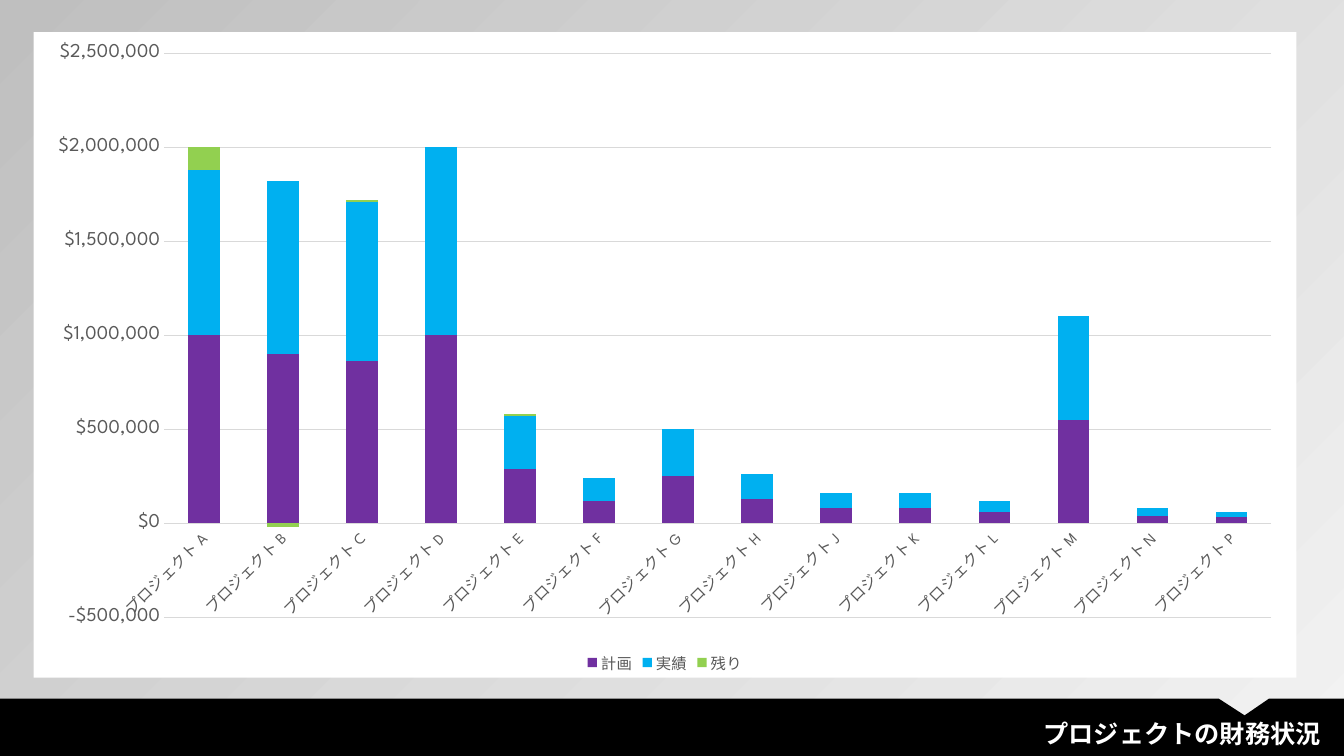
from lxml import etree
from pptx import Presentation
from pptx import util as u
from pptx.chart.data import CategoryChartData
from pptx.dml.color import RGBColor
from pptx.enum import chart as ch, text
from pptx.oxml import parse_xml
from pptx.oxml.ns import nsdecls, qn

FONT = "League Spartan"
BLACK = RGBColor(0x00, 0x00, 0x00)
WHITE = RGBColor(0xFF, 0xFF, 0xFF)
LIGHT = RGBColor(0xF2, 0xF2, 0xF2)
SILVER = RGBColor(0xBF, 0xBF, 0xBF)
GRID = RGBColor(0xD9, 0xD9, 0xD9)
GRAY = RGBColor(0x59, 0x59, 0x59)
PURPLE = RGBColor(0x70, 0x30, 0xA0)
BLUE = RGBColor(0x00, 0xB0, 0xF0)
GREEN = RGBColor(0x92, 0xD0, 0x50)

# Amounts in thousands of dollars
SERIES = [
    ("計画", PURPLE, [1000, 900, 860, 1000, 290, 120, 250, 130, 80, 80, 60, 550, 40, 30]),
    ("実績", BLUE, [880, 920, 850, 1000, 280, 120, 250, 130, 80, 80, 60, 550, 40, 30]),
    ("残り", GREEN, [120, -20, 10, 0, 10] + [0] * 9),
]


def set_font(font, size, color, bold=False):
    for name, value in {"name": FONT, "size": u.Pt(size), "bold": bold}.items():
        setattr(font, name, value)
    font.color.rgb = color


def set_line(line, color):
    line.color.rgb = color
    line.width = u.Pt(0.75)


prs = Presentation()
prs.slide_width, prs.slide_height = u.Pt(960), u.Pt(540)
slide = prs.slides.add_slide(prs.slide_layouts[6])

# Background
fill = slide.background.fill
fill.gradient()
fill.gradient_angle = 135
for stop, color in zip(fill.gradient_stops, (LIGHT, SILVER)):
    stop.color.rgb = color

# Title band with a notch
outline = [(0, 499), (870.5, 499), (889, 511), (906.5, 499), (960, 499), (960, 540), (0, 540)]
points = [(u.Pt(x), u.Pt(y)) for x, y in outline]
builder = slide.shapes.build_freeform(*points[0])
builder.add_line_segments(points[1:], close=True)
band = builder.convert_to_shape()
band.shadow.inherit = False
band.fill.solid()
band.fill.fore_color.rgb = BLACK
band.line.fill.background()

# Title
title = slide.shapes.add_textbox(u.Pt(298), u.Pt(509.8), u.Pt(652.4), u.Pt(28.8))
tf = title.text_frame
tf.word_wrap = True
p = tf.paragraphs[0]
p.alignment = text.PP_ALIGN.RIGHT
r = p.add_run()
r.text = "プロジェクトの財務状況"
set_font(r.font, 18, WHITE, bold=True)

# Stacked column chart
data = CategoryChartData(number_format='"$"#,##0')
data.categories = [f"プロジェクト {letter}" for letter in "ABCDEFGHJKLMNP"]
for name, _, amounts in SERIES:
    data.add_series(name, [amount * 1000 for amount in amounts])
chart = slide.shapes.add_chart(
    ch.XL_CHART_TYPE.COLUMN_STACKED,
    u.Pt(24), u.Pt(23), u.Pt(902), u.Pt(461), data).chart
set_font(chart.font, 14, BLACK)
chart.has_title = False

plot = chart.plots[0]
for name, value in {"gap_width": 150, "overlap": 100, "vary_by_categories": False}.items():
    setattr(plot, name, value)
for series, (_, color, _) in zip(plot.series, SERIES):
    series.invert_if_negative = False
    series.format.fill.solid()
    series.format.fill.fore_color.rgb = color

chart.has_legend = True
chart.legend.position = ch.XL_LEGEND_POSITION.BOTTOM
chart.legend.include_in_layout = False
set_font(chart.legend.font, 11, GRAY)

cat_axis, val_axis = chart.category_axis, chart.value_axis
for axis, size in ((cat_axis, 11), (val_axis, 14)):
    axis.major_tick_mark = axis.minor_tick_mark = ch.XL_TICK_MARK.NONE
    set_font(axis.tick_labels.font, size, GRAY)
set_line(cat_axis.format.line, GRID)
labels = cat_axis._element.find(qn("c:txPr")).find(qn("a:bodyPr"))
labels.set("rot", "-2700000")
labels.set("vert", "horz")

for name, value in {"minimum_scale": -500000, "maximum_scale": 2500000,
                    "major_unit": 500000, "has_major_gridlines": True}.items():
    setattr(val_axis, name, value)
set_line(val_axis.major_gridlines.format.line, GRID)
val_axis.format.line.fill.background()
val_axis.tick_labels.number_format = '"$"#,##0'
val_axis.tick_labels.number_format_is_linked = False

# White chart area
chart_space = chart._chartSpace
chart_space.find(qn("c:txPr")).addprevious(parse_xml(
    f'<c:spPr {nsdecls("c", "a")}><a:solidFill><a:srgbClr val="{WHITE}"/></a:solidFill>'
    '<a:ln><a:noFill/></a:ln></c:spPr>'))

# Plot area position, as fractions of the chart
plot_area = chart_space.find(qn("c:chart")).find(qn("c:plotArea"))
for old in plot_area.findall(qn("c:layout")):
    plot_area.remove(old)
layout = etree.Element(qn("c:layout"))
manual = etree.SubElement(layout, qn("c:manualLayout"))
for tag, value in (("layoutTarget", "inner"), ("xMode", "edge"), ("yMode", "edge"),
                   ("x", "0.1035"), ("y", "0.0325"), ("w", "0.8765"), ("h", "0.874")):
    etree.SubElement(manual, qn(f"c:{tag}")).set("val", value)
plot_area.insert(0, layout)

prs.save("out.pptx")
